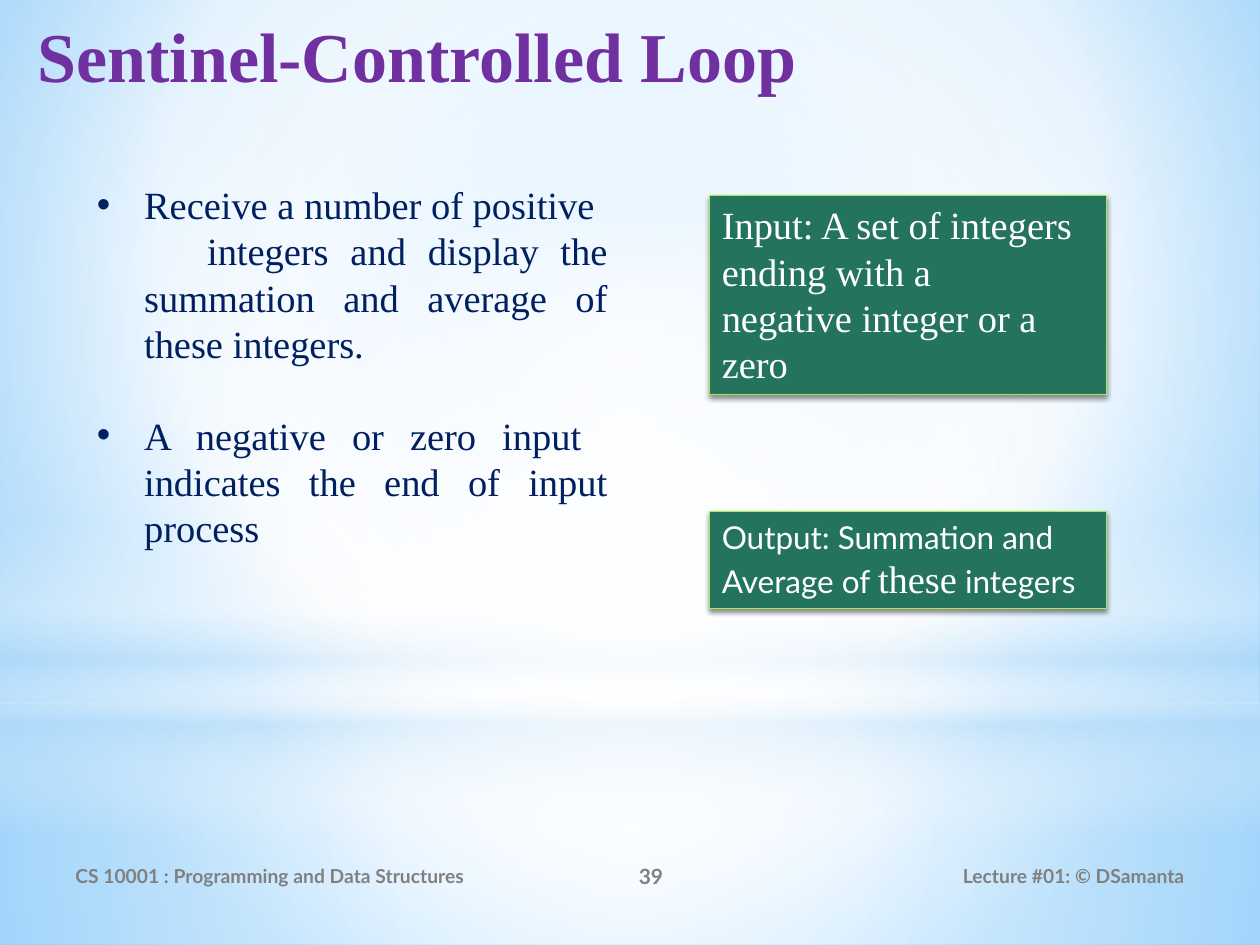
"""Build the Sentinel-Controlled Loop lecture slide."""
from pptx import Presentation
from pptx.dml.color import RGBColor
from pptx.enum.shapes import MSO_SHAPE as SHAPE
from pptx.enum.text import MSO_ANCHOR as ANCHOR, MSO_AUTO_SIZE as FIT, PP_ALIGN as ALIGN
from pptx.oxml import parse_xml
from pptx.oxml.ns import nsdecls, qn
from pptx.util import Pt

W, H = 720, 540
SERIF, SANS = "Times New Roman", "Lato"
WHITE, SKY = "FFFFFF", "B4DCFA"
CENTRE = (50, 50, 50, 50)

BACKDROP = [(0, "9ED5FF", 100), (60, WHITE, 100), (100, "5BB9FF", 100)]
GLOWS = [
    (SHAPE.RECTANGLE, 401.76, 138.24, [(0, WHITE, 91), (37, WHITE, 76), (100, SKY, 79)], CENTRE),
    (SHAPE.RECTANGLE, 0, 401.76, [(0, WHITE, 89), (48, WHITE, 62), (100, SKY, 79)], CENTRE),
    (SHAPE.RECTANGLE, 296.64, 180, [(0, WHITE, 0), (29, WHITE, 30), (45, SKY, 40),
                                    (55, WHITE, 26), (65, SKY, 60), (100, WHITE, 0)], None),
    (SHAPE.OVAL, 126, 401.76, [(0, WHITE, 100), (56, WHITE, 0)], CENTRE),
]

TITLE = "Sentinel-Controlled Loop"
TITLE_FONT = dict(name=SERIF, size=40, color="7030A0", bold=True)
FOOTERS = [
    ("CS 10001 : Programming and Data Structures", 36, 264, 11, ALIGN.LEFT),
    ("39", 300, 144, 12, ALIGN.CENTER),
    ("Lecture #01: © DSamanta", 486, 198, 11, ALIGN.RIGHT),
]
BODY_FONT = dict(name=SERIF, size=22, color="002060")
BODY = [
    ("Receive a number of positive", True, 0),
    ("integers and display the summation and average of these integers.", False, 0),
    ("A negative or zero input  indicates the end of input process", True, 26),
]
HANG = 27
LARGE = dict(name=SERIF, size=22, color=WHITE)
SMALL = dict(name=SANS, size=18, color=WHITE)
CARDS = [
    (111.6, 113.76, [[("Input: A set of integers", LARGE)], [("ending with a", LARGE)],
                     [("negative integer or a zero", LARGE)]]),
    (292.32, 55.44, [[("Output: Summation and", SMALL)],
                     [("Average of ", SMALL), ("these", LARGE), (" integers", SMALL)]]),
]


def rgb(value):
    """Turn a hex string into a colour."""
    return RGBColor.from_string(value)


def box(x, y, w, h):
    """Turn a place in points into lengths."""
    return [Pt(v) for v in (x, y, w, h)]


def set_gradient(el, stops, focus):
    """Swap the solid fill of an element for a radial or downward gradient."""
    gs = "".join(
        f'<a:gs pos="{pos * 1000}"><a:srgbClr val="{color}">'
        f'<a:alpha val="{alpha * 1000}"/></a:srgbClr></a:gs>' for pos, color, alpha in stops)
    if focus:
        sides = " ".join(f'{k}="{v * 1000}"' for k, v in zip("ltrb", focus))
        way = f'<a:path path="circle"><a:fillToRect {sides}/></a:path>'
    else:
        way = '<a:lin ang="5400000" scaled="0"/>'
    grad = parse_xml(f'<a:gradFill {nsdecls("a")} rotWithShape="1">'
                     f'<a:gsLst>{gs}</a:gsLst>{way}</a:gradFill>')
    el.replace(el.find(qn("a:solidFill")), grad)


def set_frame(tf, **formats):
    """Wrap a text frame and apply its format values."""
    for key, value in {"word_wrap": True, "vertical_anchor": ANCHOR.TOP, **formats}.items():
        setattr(tf, key, value)
    return tf


def add_runs(p, runs, align=ALIGN.LEFT):
    """Fill a paragraph with formatted runs."""
    p.alignment = align
    for text, font in runs:
        r = p.add_run()
        r.text = text
        for key, value in font.items():
            if key == "color":
                r.font.color.rgb = rgb(value)
            else:
                setattr(r.font, key, Pt(value) if key == "size" else value)


def paragraphs(tf, count):
    """Yield the wanted number of paragraphs of a text frame."""
    for i in range(count):
        yield tf.add_paragraph() if i else tf.paragraphs[0]


def add_backdrop(s):
    """Paint the background and the glows over it."""
    s.background.fill.solid()
    set_gradient(s.element.find(".//" + qn("p:bgPr")), BACKDROP, (20, 10, 20, 60))
    for kind, y, h, stops, focus in GLOWS:
        sp = s.shapes.add_shape(kind, *box(0, y, W, h))
        sp.shadow.inherit = False
        sp.line.fill.background()
        sp.fill.solid()
        set_gradient(sp.element.spPr, stops, focus)


def add_title(s):
    """Place the title in front of the backdrop."""
    sp = s.shapes.title
    sp.left, sp.top, sp.width, sp.height = box(14.4, 3.6, 686.16, 79.2)
    s.shapes.element.append(sp.element)
    tf = set_frame(sp.text_frame, auto_size=FIT.NONE)
    add_runs(tf.paragraphs[0], [(TITLE, TITLE_FONT)])


def add_footers(s):
    """Write the footer line."""
    for text, x, w, size, align in FOOTERS:
        sp = s.shapes.add_textbox(*box(x, 486, w, 28.8))
        tf = set_frame(sp.text_frame, vertical_anchor=ANCHOR.MIDDLE)
        font = dict(name=SANS, size=size, color="808080", bold=True)
        add_runs(tf.paragraphs[0], [(text, font)], align)


def add_body(s):
    """Write the bulleted problem statement."""
    sp = s.shapes.add_textbox(*box(48.24, 100.08, 306, 220.32))
    tf = set_frame(sp.text_frame, auto_size=FIT.SHAPE_TO_FIT_TEXT)
    for p, (text, bullet, gap) in zip(paragraphs(tf, len(BODY)), BODY):
        add_runs(p, [(text, BODY_FONT)], ALIGN.JUSTIFY)
        p.space_before = Pt(gap)
        pPr = p._p.get_or_add_pPr()
        pPr.set("marL", str(Pt(HANG)))
        pPr.set("indent", str(Pt(-HANG if bullet else 36)))
        if bullet:
            pPr.append(parse_xml(f'<a:buFont {nsdecls("a")} typeface="Arial"/>'))
            pPr.append(parse_xml(f'<a:buChar {nsdecls("a")} char="•"/>'))


def add_cards(s):
    """Draw the input and output cards."""
    for y, h, lines in CARDS:
        sp = s.shapes.add_shape(SHAPE.RECTANGLE, *box(405.36, y, 226.8, h))
        sp.fill.solid()
        sp.fill.fore_color.rgb = rgb("23735D")
        sp.line.color.rgb = rgb("A7EA52")
        sp.line.width = Pt(0.75)
        sp.shadow.inherit = False
        sp.element.spPr.find(qn("a:effectLst")).append(parse_xml(
            f'<a:outerShdw {nsdecls("a")} blurRad="{Pt(3.1)}" dist="{Pt(1.8)}" dir="5400000" '
            'rotWithShape="0"><a:srgbClr val="000000"><a:alpha val="45000"/></a:srgbClr>'
            '</a:outerShdw>'))
        tf = set_frame(sp.text_frame, auto_size=FIT.SHAPE_TO_FIT_TEXT)
        for p, runs in zip(paragraphs(tf, len(lines)), lines):
            add_runs(p, runs)


def main():
    """Assemble and save the slide."""
    prs = Presentation()
    prs.slide_width, prs.slide_height = Pt(W), Pt(H)
    s = prs.slides.add_slide(prs.slide_layouts[5])
    for add_part in (add_backdrop, add_title, add_footers, add_body, add_cards):
        add_part(s)
    prs.save("out.pptx")


if __name__ == "__main__":
    main()
